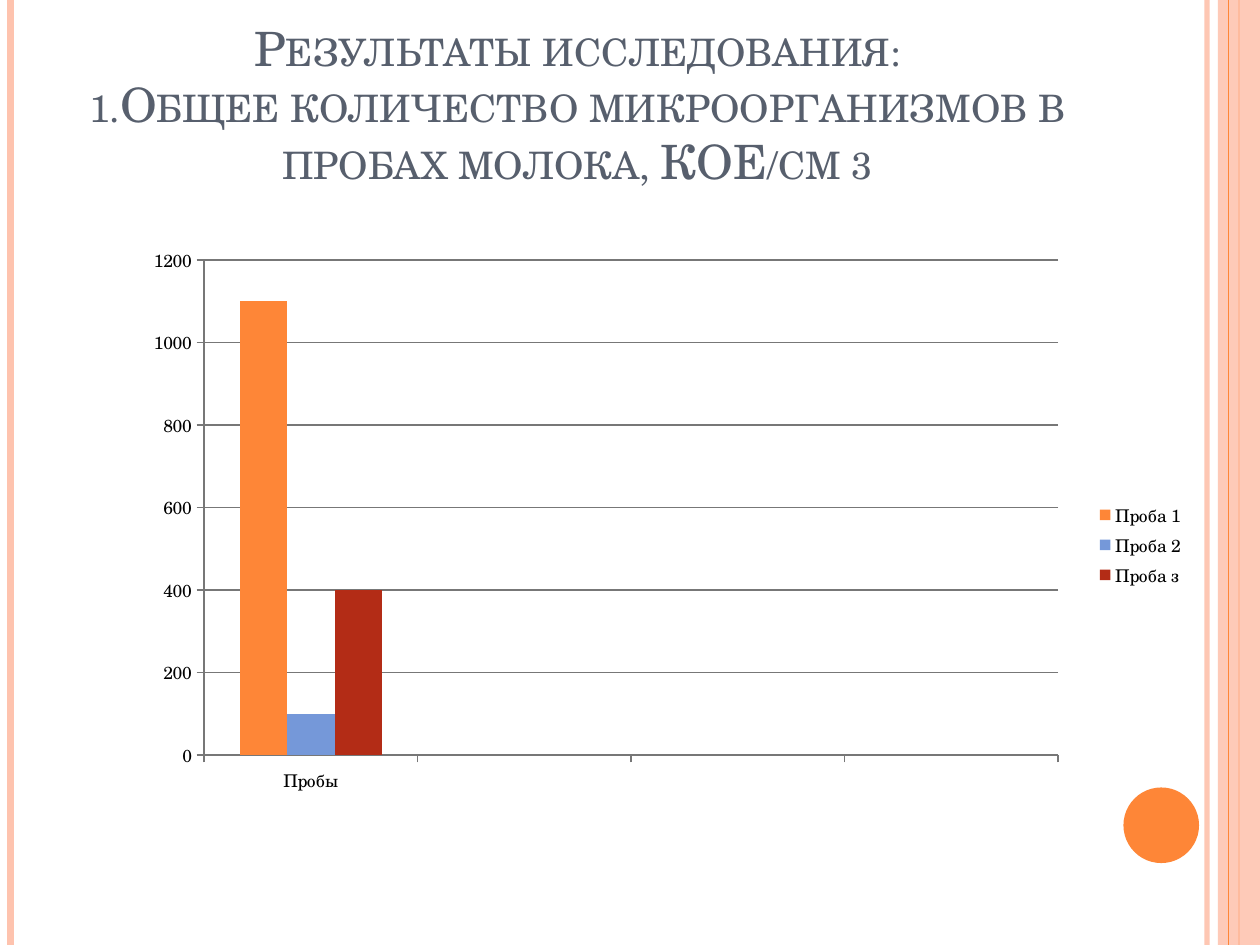
import pptx
import pptx.chart.data
import pptx.dml.color
import pptx.enum.chart
import pptx.enum.shapes
import pptx.enum.text
import pptx.oxml
import pptx.oxml.ns
import pptx.util
from lxml import etree

Pt = pptx.util.Pt
qn = pptx.oxml.ns.qn
FONT = "TeX Gyre Schola"
COLORS = {"peach": "FEC3AE", "orange": "FE8637", "blue": "7598D9", "red": "B32C16",
          "title": "575F6D", "text": "000000", "grid": "777777"}
SERIES = [("Проба 1", 1100, "orange"), ("Проба 2", 100, "blue"), ("Проба з", 400, "red")]
CATEGORIES = ["Пробы", "", "", ""]
PLOT_AREA = {"x": 0.063, "y": 0.024, "w": 0.806, "h": 0.827}


def rgb(name):
    return pptx.dml.color.RGBColor.from_string(COLORS[name])


def set_opacity(element, percent):
    color = element.find(".//" + qn("a:srgbClr"))
    etree.SubElement(color, qn("a:alpha")).set("val", str(percent * 1000))


def add_shape(slide, kind, box, color):
    shape = slide.shapes.add_shape(kind, *map(Pt, box))
    shape.shadow.inherit = False
    shape.fill.solid()
    shape.fill.fore_color.rgb = rgb(color)
    shape.line.fill.background()
    return shape


def add_stripe(slide, x, top, height, color, width):
    line = slide.shapes.add_connector(
        pptx.enum.shapes.MSO_CONNECTOR.STRAIGHT, Pt(x), Pt(top), Pt(x), Pt(top + height))
    line.line.color.rgb = rgb(color)
    line.line.width = Pt(width)
    etree.SubElement(line._element.spPr, qn("a:effectLst"))
    return line


def add_decoration(slide, box):
    left, top, width, height = box
    right = left + width
    # Stripes along both edges, with the translucent band between them
    inner = add_stripe(slide, right - 30.25, top, height, "peach", 3)
    set_opacity(inner._element.spPr, 93)
    add_stripe(slide, left + 6, top, height, "peach", 4.5)
    add_stripe(slide, right - 12, top, height, "orange", 1.5)
    shapes = pptx.enum.shapes.MSO_SHAPE
    band = add_shape(slide, shapes.RECTANGLE, (right - 24, top, 24, height), "peach")
    set_opacity(band._element.spPr, 87)
    add_stripe(slide, right - 18, top, height, "orange", 0.75)
    # Corner disc
    add_shape(slide, shapes.OVAL, (right - 78, top + height - 90, 43.2, 43.2), "orange")


def add_title(slide, box):
    text_frame = slide.shapes.add_textbox(*map(Pt, box)).text_frame
    text_frame.word_wrap = True
    text_frame.vertical_anchor = pptx.enum.text.MSO_ANCHOR.BOTTOM
    paragraph = text_frame.paragraphs[0]
    paragraph.text = ("Результаты исследования:\v"
                      "1.Общее количество микроорганизмов в пробах молока, КОЕ/см 3")
    paragraph.alignment = pptx.enum.text.PP_ALIGN.CENTER
    for run in paragraph.runs:
        run.font.name = FONT
        run.font.size = Pt(27)
        run.font.color.rgb = rgb("title")
        run.font._element.set("cap", "small")


def set_plot_layout(chart):
    plot_area = chart._chartSpace.chart.plotArea
    for old_layout in plot_area.findall(qn("c:layout")):
        plot_area.remove(old_layout)
    layout = etree.Element(qn("c:layout"))
    manual = etree.SubElement(layout, qn("c:manualLayout"))
    settings = [("layoutTarget", "inner"), ("xMode", "edge"), ("yMode", "edge")]
    for tag, value in settings + list(PLOT_AREA.items()):
        etree.SubElement(manual, qn("c:" + tag)).set("val", str(value))
    plot_area.insert(0, layout)


def add_sample_chart(slide, box):
    data = pptx.chart.data.CategoryChartData()
    data.categories = CATEGORIES
    for name, value, _ in SERIES:
        data.add_series(name, [value, None, None, None])
    chart = slide.shapes.add_chart(
        pptx.enum.chart.XL_CHART_TYPE.COLUMN_CLUSTERED, *map(Pt, box), data).chart
    chart.has_title = False
    chart.font.name = FONT
    chart.font.size = Pt(10)
    chart.font.color.rgb = rgb("text")
    set_plot_layout(chart)

    # Columns
    plot = chart.plots[0]
    plot.gap_width = 150
    plot.vary_by_categories = False
    for series, (_, _, color) in zip(plot.series, SERIES):
        series.format.fill.solid()
        series.format.fill.fore_color.rgb = rgb(color)

    # Axes and gridlines
    value_axis = chart.value_axis
    value_axis.minimum_scale = 0
    value_axis.maximum_scale = 1200
    value_axis.major_unit = 200
    value_axis.has_major_gridlines = True
    for axis in (chart.category_axis, value_axis):
        axis.major_tick_mark = pptx.enum.chart.XL_TICK_MARK.OUTSIDE
    for part in (chart.category_axis, value_axis, value_axis.major_gridlines):
        part.format.line.color.rgb = rgb("grid")
        part.format.line.width = Pt(0.75)

    # Legend
    chart.has_legend = True
    chart.legend.position = pptx.enum.chart.XL_LEGEND_POSITION.RIGHT
    chart.legend.include_in_layout = False


def main():
    presentation = pptx.Presentation()
    presentation.slide_width = Pt(720)
    presentation.slide_height = Pt(540)
    slide = presentation.slides.add_slide(presentation.slide_layouts[6])
    add_decoration(slide, (0, 0, 720, 540))
    add_title(slide, (36, 21.6, 588, 90))
    add_sample_chart(slide, (78.5, 140.4, 605.5, 342))
    presentation.save("out.pptx")


if __name__ == "__main__":
    main()
